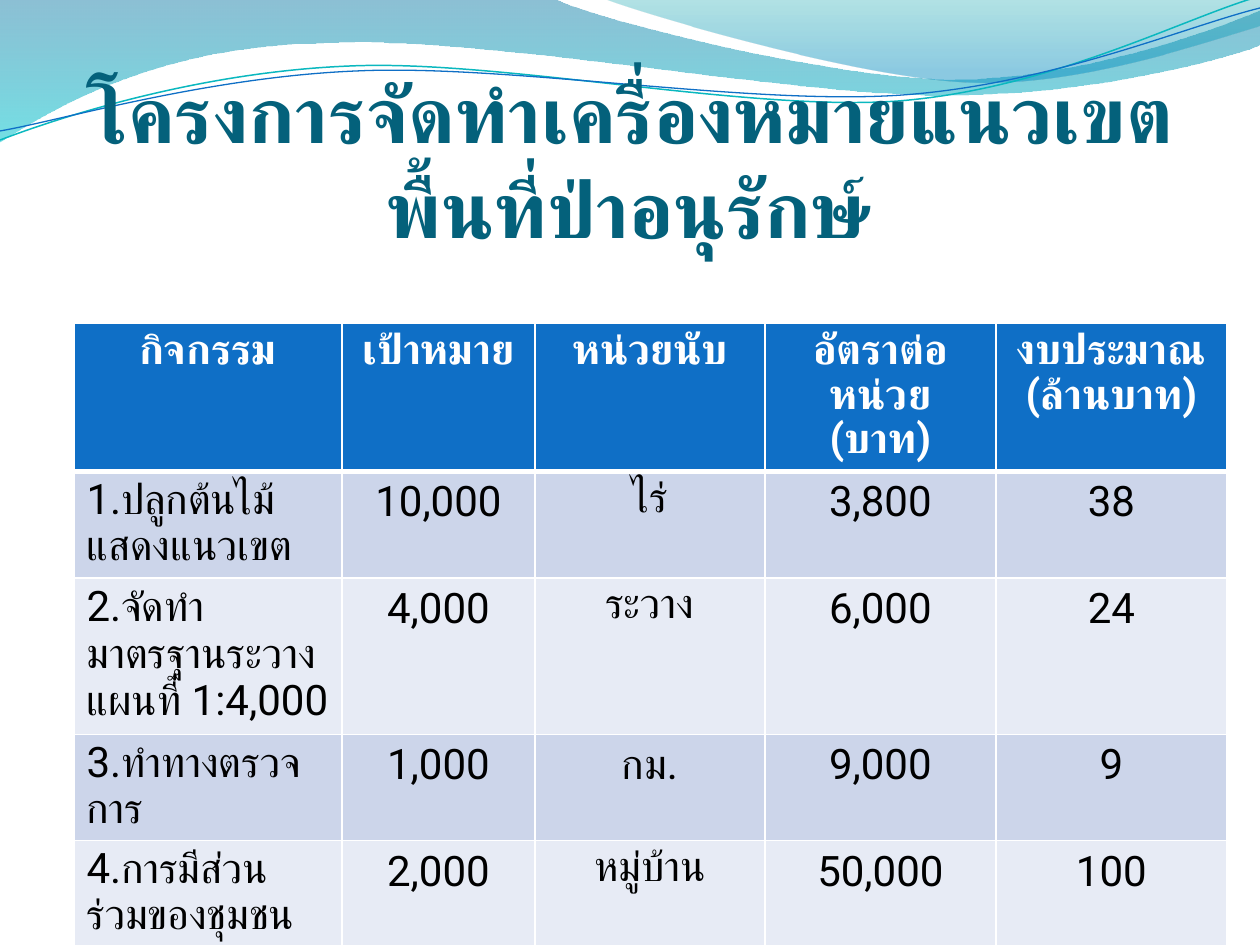
from lxml import etree
from pptx import Presentation
from pptx import util as u
from pptx.dml.color import RGBColor
from pptx.enum import lang, text
from pptx.oxml import ns

PX = 914400 // 126
FONT = "Roboto"
WHITE = RGBColor(0xFF, 0xFF, 0xFF)
BLACK = RGBColor(0x00, 0x00, 0x00)
TITLE_TEAL = RGBColor(0x04, 0x61, 0x7B)
BLUE = RGBColor(0x0F, 0x6F, 0xC6)
CYAN = RGBColor(0x0A, 0xB8, 0xBF)
BAND_DARK = RGBColor(0xCC, 0xD5, 0xEA)
BAND_LIGHT = RGBColor(0xE7, 0xEB, 0xF5)

# Each wave is a list of steps: one point is a straight line, three a curve.
BACK_WAVE = [
    [(0, 0)], [(554, -1)],
    [(600, 21), (837, 79), (955, 79)],
    [(1075, 79), (1207, 33), (1260, 11)],
    [(1261, 45)],
    [(1238, 55), (1096, 96), (940, 95)],
    [(784, 95), (481, 35), (324, 43)],
    [(163, 45), (58, 105), (-1, 142)],
]
FRONT_WAVE = [
    [(604, -1)],
    [(641, 14), (859, 78), (969, 82)],
    [(1079, 87), (1211, 40), (1260, 26)],
    [(1260, 0)],
]
CYAN_LINE = [
    [(0, 140)],
    [(60, 117), (199, 72), (349, 66)],
    [(498, 59), (747, 112), (898, 101)],
    [(1050, 89), (1182, 19), (1257, -3)],
]
BLUE_LINE = [
    [(0, 131)],
    [(59, 121), (207, 77), (357, 71)],
    [(508, 64), (751, 106), (903, 95)],
    [(1053, 84), (1187, 26), (1260, 8)],
]
# Stops are (position, colour, opacity in percent).
BACK_STOPS = [(0, RGBColor(0x00, 0x74, 0xA1), 45),
              (1, RGBColor(0x00, 0xC6, 0xCF), 55)]
FRONT_STOPS = [(0, RGBColor(0x00, 0xA1, 0xA9), 30),
               (0.8, RGBColor(0x00, 0x8B, 0xBF), 45)]

TITLE = "โครงการจัดทำเครื่องหมายแนวเขตพื้นที่ป่าอนุรักษ์"
COLUMN_WIDTHS = [268, 193, 230, 231, 231]
ROW_HEIGHTS = [145, 104, 154, 104, 111]
BUDGET = [
    ["กิจกรรม", "เป้าหมาย", "หน่วยนับ", "อัตราต่อหน่วย (บาท)", "งบประมาณ (ล้านบาท)"],
    ["1.ปลูกต้นไม้แสดงแนวเขต", "10,000", "ไร่", "3,800", "38"],
    ["2.จัดทำมาตรฐานระวางแผนที่ 1:4,000", "4,000", "ระวาง", "6,000", "24"],
    ["3.ทำทางตรวจการ", "1,000", "กม.", "9,000", "9"],
    ["4.การมีส่วนร่วมของชุมชน", "2,000", "หมู่บ้าน", "50,000", "100"],
]
# Thai lines stand closer together than lines with Latin signs.
HEADER_SPACING = 0.9
ACTIVITY_SPACING = [0.93, 0.95, 0.93, 0.93]
UNIT_SPACING = [0.87, 0.87, 1, 0.87]


def px(length):
    return u.Emu(length * PX)


def write(frame, words, size=24, color=BLACK, bold=False, centered=True, spacing=1):
    paragraph = frame.paragraphs[0]
    paragraph.alignment = text.PP_ALIGN.CENTER if centered else text.PP_ALIGN.LEFT
    paragraph.line_spacing = float(spacing)
    run = paragraph.add_run()
    run.text = words
    font = run.font
    font.name, font.size, font.bold = FONT, u.Pt(size), bold
    font.color.rgb = color
    font.language_id = lang.MSO_LANGUAGE_ID.THAI
    etree.SubElement(run._r.rPr, ns.qn("a:cs"), typeface=FONT)


def add_wave(slide, steps, closed):
    points = [point for step in steps for point in step]
    builder = slide.shapes.build_freeform(*points[0], scale=PX)
    builder.add_line_segments(points[1:], close=closed)
    wave = builder.convert_to_shape()
    wave.shadow.inherit = False
    segments = iter(wave._element.xpath(".//a:path/a:lnTo"))
    for step in steps[1:]:
        first = next(segments)
        if len(step) == 3:
            curve = etree.Element(ns.qn("a:cubicBezTo"))
            first.addprevious(curve)
            for segment in (first, next(segments), next(segments)):
                curve.append(segment[0])
                segment.getparent().remove(segment)
    return wave


def add_gradient_wave(slide, steps, stops):
    wave = add_wave(slide, steps, closed=True)
    wave.line.fill.background()
    wave.fill.gradient()
    wave.fill.gradient_angle = 270
    for stop, (position, color, _) in zip(wave.fill.gradient_stops, stops):
        stop.position, stop.color.rgb = position, color
    colors = wave._element.xpath(".//a:gs/a:srgbClr")
    for element, (_, _, opacity) in zip(colors, stops):
        etree.SubElement(element, ns.qn("a:alpha"), val=str(opacity * 1000))


def add_line_wave(slide, steps, color, width):
    wave = add_wave(slide, steps, closed=False)
    wave.fill.background()
    wave.line.color.rgb = color
    wave.line.width = u.Pt(width)


def add_title(slide):
    box = slide.shapes.add_textbox(px(63), px(96), px(1134), px(158))
    frame = box.text_frame
    frame.word_wrap = True
    frame.vertical_anchor = text.MSO_ANCHOR.BOTTOM
    frame.margin_left = frame.margin_right = frame.margin_bottom = 0
    write(frame, TITLE, size=45, color=TITLE_TEAL, bold=True)


def set_borders(cell, top, bottom):
    """Draw white borders; top and bottom are widths in points."""
    properties = cell._tc.get_or_add_tcPr()
    widths = {"L": 1, "R": 1, "T": top, "B": bottom}
    for index, (side, width) in enumerate(widths.items()):
        border = etree.Element(ns.qn(f"a:ln{side}"), w=str(u.Pt(width)))
        fill = etree.SubElement(border, ns.qn("a:solidFill"))
        etree.SubElement(fill, ns.qn("a:srgbClr"), val=str(WHITE))
        properties.insert(index, border)


def line_spacing(r, c):
    if r == 0:
        return HEADER_SPACING
    return {0: ACTIVITY_SPACING[r - 1], 2: UNIT_SPACING[r - 1]}.get(c, 1)


def add_budget_table(slide):
    holder = slide.shapes.add_table(
        len(BUDGET), len(COLUMN_WIDTHS), px(74), px(323),
        px(sum(COLUMN_WIDTHS)), px(sum(ROW_HEIGHTS)))
    table = holder.table
    for column, width in zip(table.columns, COLUMN_WIDTHS):
        column.width = px(width)
    for row, height in zip(table.rows, ROW_HEIGHTS):
        row.height = px(height)
    for r, entries in enumerate(BUDGET):
        header = r == 0
        band = BLUE if header else BAND_DARK if r % 2 else BAND_LIGHT
        for c, entry in enumerate(entries):
            cell = table.cell(r, c)
            cell.fill.solid()
            cell.fill.fore_color.rgb = band
            set_borders(cell, top=3 if r == 1 else 1, bottom=3 if header else 1)
            write(cell.text_frame, entry, color=WHITE if header else BLACK,
                  bold=header, centered=header or c > 0,
                  spacing=line_spacing(r, c))


def main():
    deck = Presentation()
    deck.slide_width, deck.slide_height = px(1260), px(945)
    slide = deck.slides.add_slide(deck.slide_layouts[6])
    add_gradient_wave(slide, BACK_WAVE, BACK_STOPS)
    add_gradient_wave(slide, FRONT_WAVE, FRONT_STOPS)
    add_line_wave(slide, CYAN_LINE, CYAN, 0.85)
    add_line_wave(slide, BLUE_LINE, BLUE, 0.75)
    add_title(slide)
    add_budget_table(slide)
    deck.save("out.pptx")


if __name__ == "__main__":
    main()
